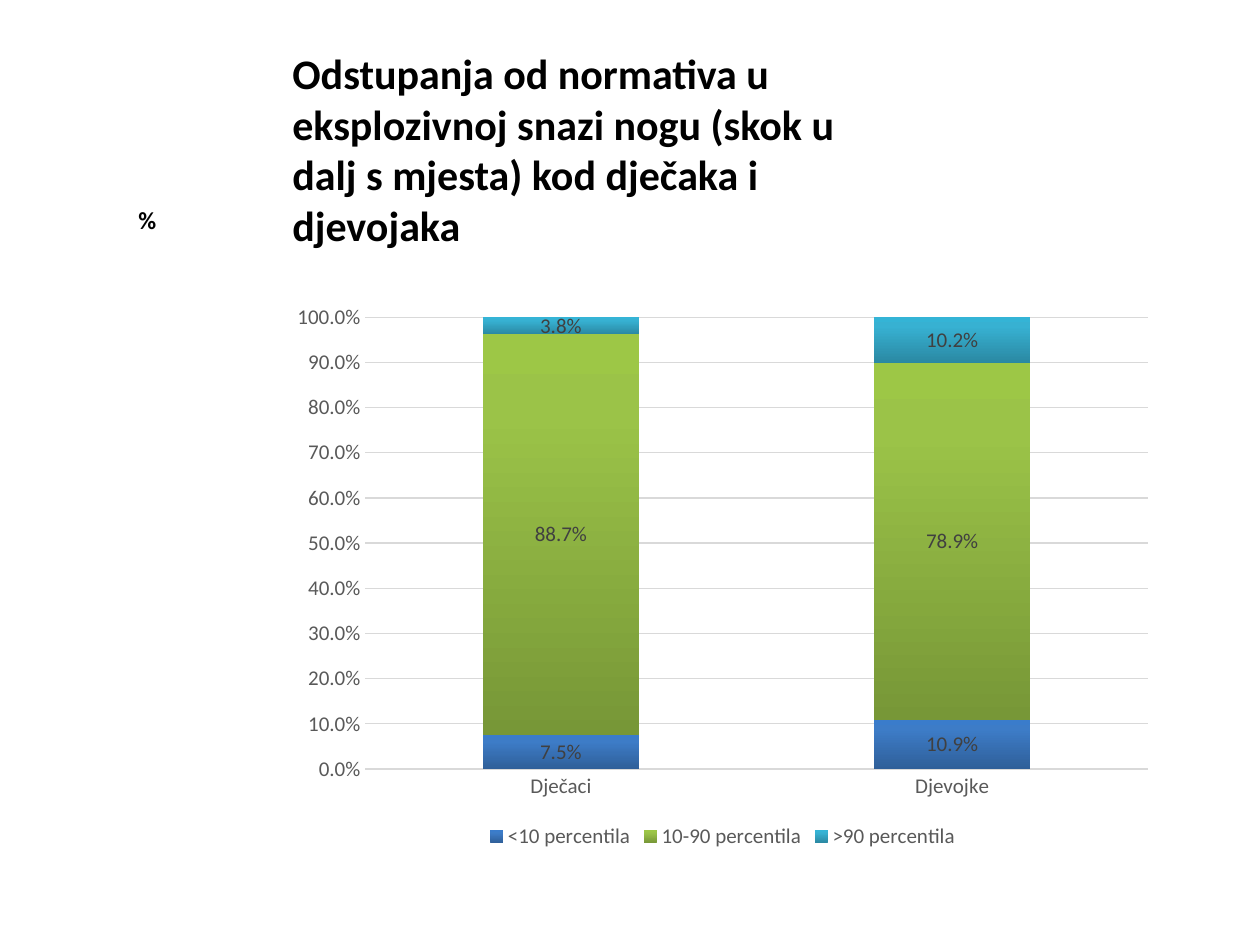
from lxml.etree import SubElement
from pptx import Presentation
from pptx.chart.data import CategoryChartData
from pptx.dml.color import RGBColor
from pptx.enum.chart import XL_CHART_TYPE, XL_LABEL_POSITION, XL_LEGEND_POSITION, XL_TICK_MARK
from pptx.enum.text import MSO_ANCHOR, MSO_AUTO_SIZE, PP_ALIGN
from pptx.oxml.ns import qn
from pptx.util import Inches, Pt

COLORS = {"text": "000000", "axis": "595959", "label": "404040", "grid": "D9D9D9"}
FONT = "Calibri"
PERCENT = "0.0%"
STOPS = (0, 80, 100)
CATEGORIES = ("Dječaci", "Djevojke")
PERCENTILES = (
    ("<10 percentila", (0.075, 0.109), ("2F5F99", "3D7CC7", "3A7CCB")),
    ("10-90 percentila", (0.887, 0.789), ("779737", "9BC348", "9DC746")),
    (">90 percentila", (0.038, 0.102), ("2A88A2", "37B1D2", "34B4D6")),
)


def format_font(font, size, color, bold=False):
    font.name = FONT
    font.size = Pt(size)
    font.bold = bold
    font.color.rgb = RGBColor.from_string(COLORS[color])


def write_text(holder, text, size=14, color="text", bold=True):
    frame = holder.text_frame
    frame.word_wrap = True
    frame.auto_size = MSO_AUTO_SIZE.SHAPE_TO_FIT_TEXT
    frame.vertical_anchor = MSO_ANCHOR.TOP
    paragraph = frame.paragraphs[0]
    paragraph.alignment = PP_ALIGN.LEFT
    run = paragraph.add_run()
    run.text = text
    format_font(run.font, size, color, bold)


def add_title(slide, text):
    title = slide.shapes.title
    title.left, title.top = Inches(2.22), Inches(0.33)
    title.width, title.height = Inches(4.66), Inches(1.72)
    write_text(title, text, size=24)


def add_unit(slide, text):
    unit = slide.shapes.add_textbox(Inches(1), Inches(1.58), Inches(1), Inches(0.34))
    write_text(unit, text)


def fill_gradient(series, colors):
    series.format.fill.gradient()
    gradient = series.format.fill._fill._gradFill
    stop_list = gradient.find(qn("a:gsLst"))
    for stop in list(stop_list):
        stop_list.remove(stop)
    for position, color in zip(STOPS, colors):
        stop = SubElement(stop_list, qn("a:gs"), pos=str(position * 1000))
        SubElement(stop, qn("a:srgbClr"), val=color)
    gradient.find(qn("a:lin")).set("ang", str(270 * 60000))


def format_series(series, colors):
    fill_gradient(series, colors)
    labels = series.data_labels
    labels.show_value = True
    labels.number_format = PERCENT
    labels.number_format_is_linked = False
    labels.position = XL_LABEL_POSITION.CENTER
    format_font(labels.font, 12, "label")


def format_line(line, width):
    line.color.rgb = RGBColor.from_string(COLORS["grid"])
    line.width = Pt(width)


def format_axes(chart):
    for axis in (chart.category_axis, chart.value_axis):
        axis.major_tick_mark = axis.minor_tick_mark = XL_TICK_MARK.NONE
        format_font(axis.tick_labels.font, 12, "axis")
    format_line(chart.category_axis.format.line, 1)
    values = chart.value_axis
    values.minimum_scale, values.maximum_scale, values.major_unit = 0, 1, 0.1
    values.format.line.fill.background()
    values.tick_labels.number_format = PERCENT
    values.tick_labels.number_format_is_linked = False
    format_line(values.major_gridlines.format.line, 0.75)


def add_percentile_chart(slide):
    data = CategoryChartData(number_format=PERCENT)
    data.categories = CATEGORIES
    for name, values, _ in PERCENTILES:
        data.add_series(name, values)
    chart = slide.shapes.add_chart(
        XL_CHART_TYPE.COLUMN_STACKED,
        Inches(2.22), Inches(2.33), Inches(7.03), Inches(4.45), data,
    ).chart
    chart.has_title = False
    format_font(chart.font, 10, "text")
    plot = chart.plots[0]
    plot.gap_width, plot.overlap = 150, 100
    plot.vary_by_categories = False
    for series, (_, _, colors) in zip(plot.series, PERCENTILES):
        format_series(series, colors)
    format_axes(chart)
    chart.has_legend = True
    chart.legend.position = XL_LEGEND_POSITION.BOTTOM
    chart.legend.include_in_layout = False
    format_font(chart.legend.font, 12, "axis")


def main():
    deck = Presentation()
    deck.slide_width, deck.slide_height = Inches(10), Inches(7.5)
    slide = deck.slides.add_slide(deck.slide_layouts[5])
    add_percentile_chart(slide)
    add_title(
        slide,
        "Odstupanja od normativa u eksplozivnoj snazi nogu "
        "(skok u dalj s mjesta) kod dječaka i djevojaka",
    )
    add_unit(slide, "%")
    deck.save("out.pptx")


if __name__ == "__main__":
    main()
